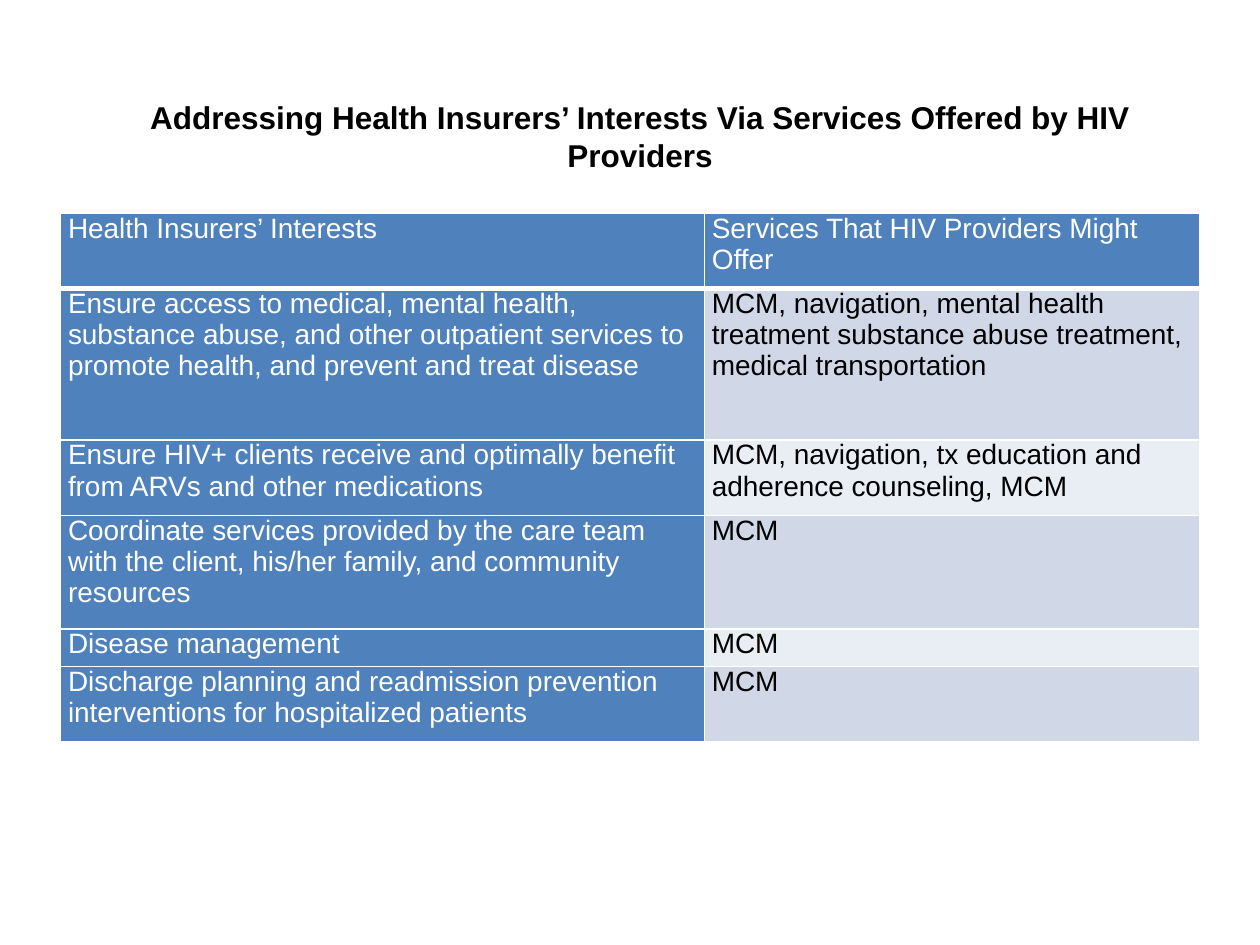
from typing import NamedTuple

from lxml import etree
from pptx import Presentation
from pptx.dml.color import RGBColor
from pptx.enum import text
from pptx.oxml.ns import qn
from pptx.util import Inches, Pt

COLORS = {
    "head": "4F81BD",
    "band_dark": "D0D8E8",
    "band_light": "E9EDF4",
    "white": "FFFFFF",
    "black": "000000",
}


class Row(NamedTuple):
    interest: str
    service: str
    height: float


ROWS = [
    Row("Health Insurers’ Interests", "Services That HIV Providers Might Offer", 0.6),
    Row("Ensure access to medical, mental health, substance abuse, and other outpatient "
        "services to promote health, and prevent and treat disease",
        "MCM, navigation, mental health treatment substance abuse treatment, "
        "medical transportation", 1.2),
    Row("Ensure HIV+ clients receive and optimally benefit from ARVs and other medications",
        "MCM, navigation, tx education and adherence counseling, MCM", 0.6),
    Row("Coordinate services provided by the care team with the client, his/her family, "
        "and community resources", "MCM", 0.9),
    Row("Disease management", "MCM", 0.3),
    Row("Discharge planning and readmission prevention interventions for hospitalized "
        "patients", "MCM", 0.6),
]
COL_WIDTHS = (5.11, 3.93)


def write(tf, content: str, *, size: float, color: str, bold: bool = False,
          align=text.PP_ALIGN.LEFT) -> None:
    p = tf.paragraphs[0]
    p.alignment = align
    r = p.add_run()
    r.text = content
    r.font.name = "Arial"
    r.font.size = Pt(size)
    r.font.bold = bold
    r.font.color.rgb = RGBColor.from_string(COLORS[color])


def add_borders(cell, bottom: float) -> None:
    tc_pr = cell._tc.get_or_add_tcPr()
    widths = {"a:lnL": 1, "a:lnR": 1, "a:lnT": 1, "a:lnB": bottom}
    for i, (tag, width) in enumerate(widths.items()):
        ln = etree.Element(qn(tag), w=str(Pt(width)))
        fill = etree.SubElement(ln, qn("a:solidFill"))
        etree.SubElement(fill, qn("a:srgbClr"), val=COLORS["white"])
        tc_pr.insert(i, ln)


def format_cell(cell, content: str, *, fill: str, color: str, bottom: float) -> None:
    cell.margin_left = cell.margin_right = Inches(0.06)
    cell.margin_top = cell.margin_bottom = 0
    cell.fill.solid()
    cell.fill.fore_color.rgb = RGBColor.from_string(COLORS[fill])
    add_borders(cell, bottom)
    write(cell.text_frame, content, size=16, color=color)


def add_interests_table(s) -> None:
    table = s.shapes.add_table(
        len(ROWS), len(COL_WIDTHS), Inches(0.48), Inches(1.69),
        Inches(sum(COL_WIDTHS)), Inches(sum(row.height for row in ROWS))).table
    table.first_col = True
    for col, width in zip(table.columns, COL_WIDTHS):
        col.width = Inches(width)
    for i, row in enumerate(ROWS):
        table.rows[i].height = Inches(row.height)
        band = "band_dark" if i % 2 else "band_light"
        for j, content in enumerate((row.interest, row.service)):
            is_head = i == 0 or j == 0
            format_cell(table.cell(i, j), content,
                        fill="head" if is_head else band,
                        color="white" if is_head else "black",
                        bottom=3 if i == 0 else 1)


def add_title(s) -> None:
    sp = s.shapes.title
    sp.left, sp.top, sp.width, sp.height = map(Inches, (0.48, 0.75, 9.2, 0.66))
    tf = sp.text_frame
    tf.word_wrap = True
    tf.auto_size = text.MSO_AUTO_SIZE.NONE
    tf.vertical_anchor = text.MSO_ANCHOR.MIDDLE
    tf.margin_left = tf.margin_right = Inches(0.15)
    write(tf, "Addressing Health Insurers’ Interests Via Services Offered by HIV Providers",
          size=18, color="black", bold=True, align=text.PP_ALIGN.CENTER)


def main() -> None:
    prs = Presentation()
    prs.slide_width, prs.slide_height = Inches(10), Inches(7.5)
    s = prs.slides.add_slide(prs.slide_layouts[5])
    add_title(s)
    add_interests_table(s)
    prs.save("out.pptx")


if __name__ == "__main__":
    main()
